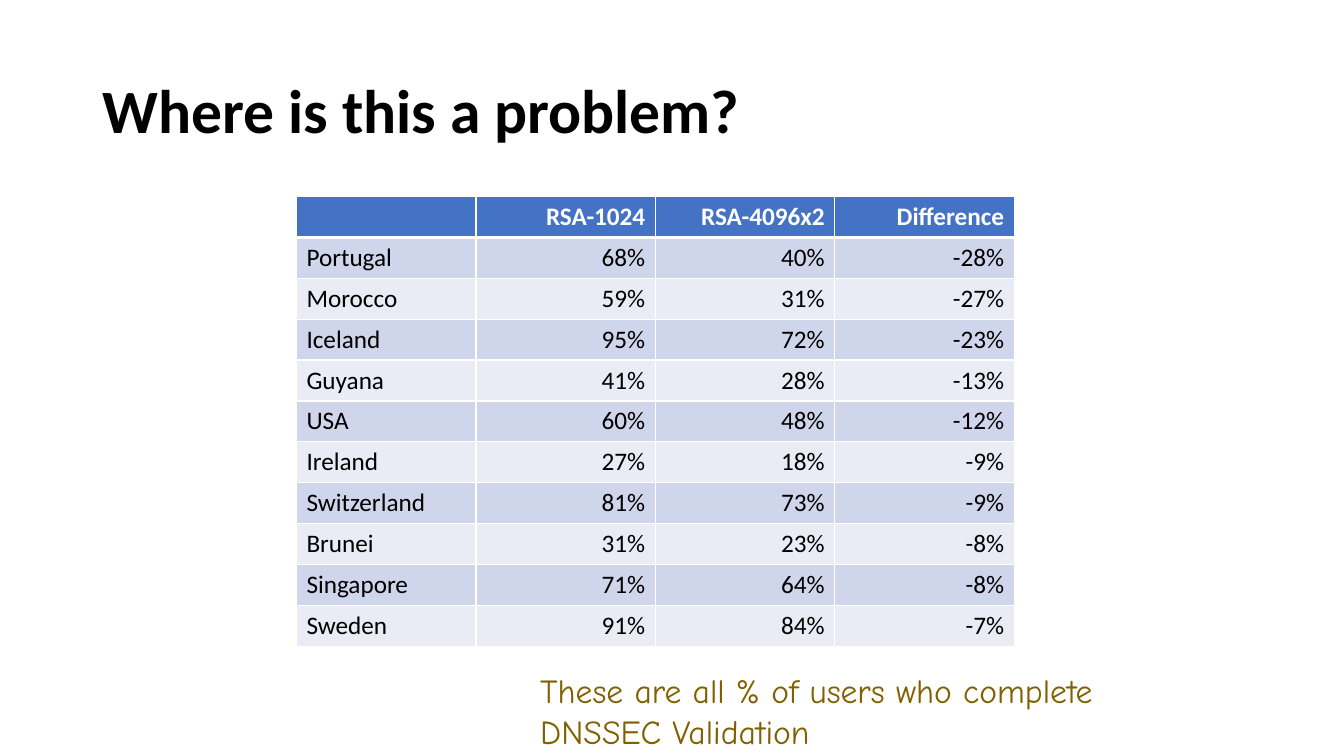
from lxml.etree import SubElement
from pptx import Presentation
from pptx.dml.color import RGBColor
from pptx.enum.text import MSO_ANCHOR as ANCHOR, PP_ALIGN as ALIGN
from pptx.oxml.ns import qn
from pptx.util import Inches, Pt

COLORS = {
    "text": "000000",
    "white": "FFFFFF",
    "header": "4472C4",
    "band_dark": "CFD5EA",
    "band_light": "E9EBF5",
    "note": "806000",
}

HEADER = ("", "RSA-1024", "RSA-4096x2", "Difference")
COUNTRIES = [
    ("Portugal", 68, 40, -28),
    ("Morocco", 59, 31, -27),
    ("Iceland", 95, 72, -23),
    ("Guyana", 41, 28, -13),
    ("USA", 60, 48, -12),
    ("Ireland", 27, 18, -9),
    ("Switzerland", 81, 73, -9),
    ("Brunei", 31, 23, -8),
    ("Singapore", 71, 64, -8),
    ("Sweden", 91, 84, -7),
]


class SlideBuilder:
    def __init__(self, slide, font="Calibri"):
        self.slide = slide
        self.font = font

    def color(self, name):
        return RGBColor.from_string(COLORS[name])

    def style(self, p, size, color="text", bold=False, align=ALIGN.LEFT, font=None):
        p.alignment = align
        p.font.name = font or self.font
        p.font.size = Pt(size)
        p.font.bold = bold
        p.font.color.rgb = self.color(color)

    def title(self, text, left, top, width, height):
        sp = self.slide.shapes.title
        sp.left, sp.top = Inches(left), Inches(top)
        sp.width, sp.height = Inches(width), Inches(height)
        tf = sp.text_frame
        tf.text = text
        tf.vertical_anchor = ANCHOR.MIDDLE
        p = tf.paragraphs[0]
        p.line_spacing = 0.9
        self.style(p, 44, bold=True)

    def note(self, text, left, top, width, height):
        sp = self.slide.shapes.add_textbox(
            Inches(left), Inches(top), Inches(width), Inches(height))
        tf = sp.text_frame
        tf.word_wrap = True
        tf.text = text
        self.style(tf.paragraphs[0], 24, "note", font="Comic Neue")

    def borders(self, cell, top, bottom):
        """Draw white cell edges; top and bottom are widths in points."""
        tc_pr = cell._tc.get_or_add_tcPr()
        for edge, width in (("L", 1), ("R", 1), ("T", top), ("B", bottom)):
            ln = SubElement(tc_pr, qn(f"a:ln{edge}"), w=str(Pt(width)))
            fill = SubElement(ln, qn("a:solidFill"))
            SubElement(fill, qn("a:srgbClr"), val=COLORS["white"])

    def table(self, rows, left, top, col_width, row_height):
        n_rows, n_cols = len(rows), len(rows[0])
        table = self.slide.shapes.add_table(
            n_rows, n_cols, Inches(left), Inches(top),
            Inches(col_width * n_cols), Inches(row_height * n_rows)).table
        for i, row in enumerate(rows):
            table.rows[i].height = Inches(row_height)
            is_header = i == 0
            band = "header" if is_header else "band_dark" if i % 2 else "band_light"
            for j, text in enumerate(row):
                cell = table.cell(i, j)
                cell.text = text
                self.style(cell.text_frame.paragraphs[0], 18,
                           "white" if is_header else "text", is_header,
                           ALIGN.RIGHT if j else ALIGN.LEFT)
                self.borders(cell, 3 if i == 1 else 1, 3 if is_header else 1)
                cell.fill.solid()
                cell.fill.fore_color.rgb = self.color(band)


def main():
    prs = Presentation()
    prs.slide_width, prs.slide_height = Inches(13.33), Inches(7.5)
    s = SlideBuilder(prs.slides.add_slide(prs.slide_layouts[5]))
    s.title("Where is this a problem?", 0.92, 0.4, 11.5, 1.45)
    rows = [HEADER] + [(name, *(f"{value}%" for value in values))
                       for name, *values in COUNTRIES]
    s.table(rows, 2.94, 1.95, 1.78, 0.405)
    s.note("These are all % of users who complete DNSSEC Validation",
           5.26, 6.6, 6.1, 0.5)
    prs.save("out.pptx")


if __name__ == "__main__":
    main()
